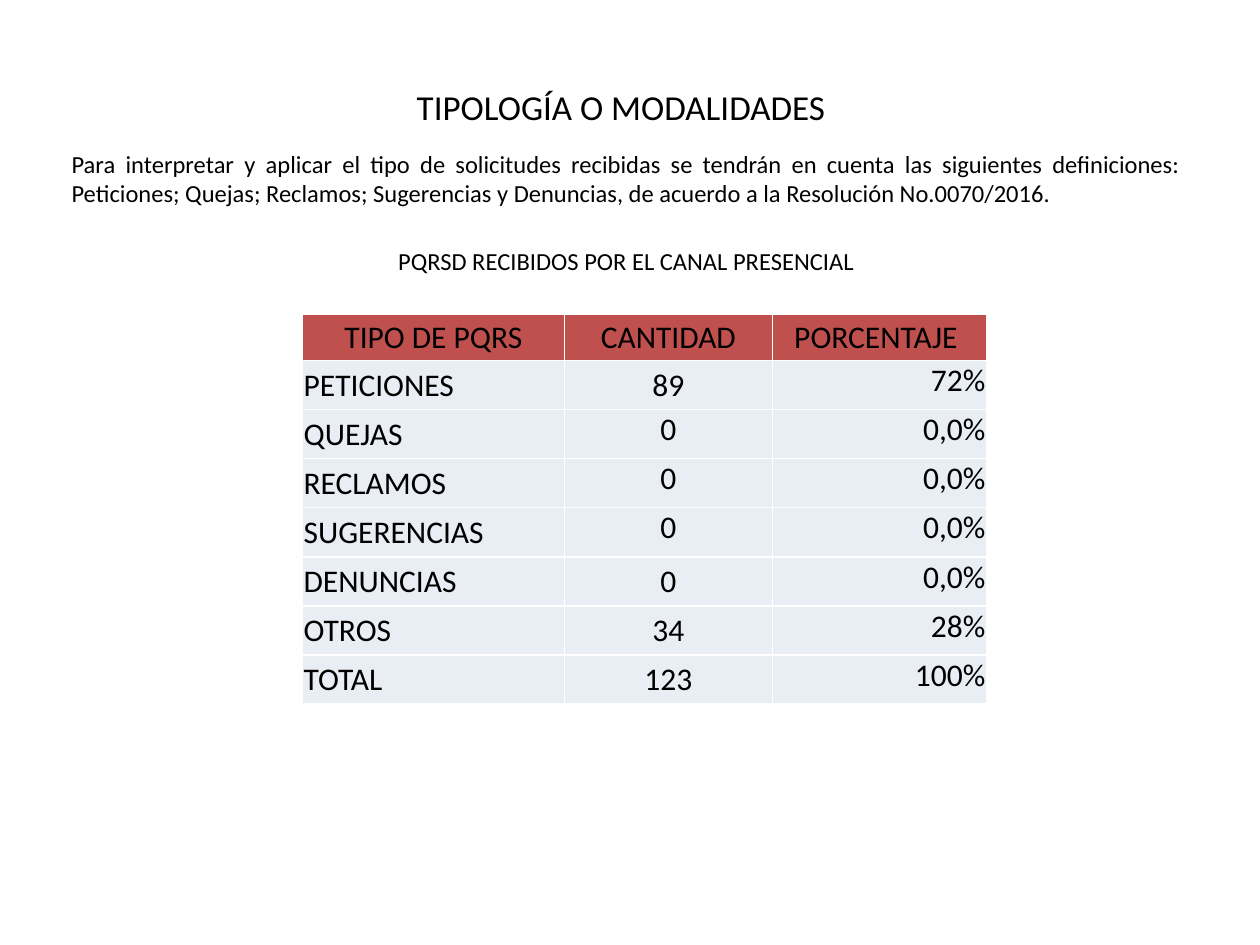
from lxml import etree
from pptx import Presentation
from pptx.dml.color import RGBColor
from pptx.enum.text import MSO_ANCHOR, PP_ALIGN
from pptx.oxml.ns import qn
from pptx.util import Inches, Pt

LEFT, CENTER, RIGHT, JUSTIFY = PP_ALIGN.LEFT, PP_ALIGN.CENTER, PP_ALIGN.RIGHT, PP_ALIGN.JUSTIFY
TOP, MIDDLE = MSO_ANCHOR.TOP, MSO_ANCHOR.MIDDLE
COLORS = {"text": "000000", "header": "C0504D", "row": "E9EDF4", "border": "FFFFFF"}
FONT = "Calibri"

HEADERS = ["TIPO DE PQRS", "CANTIDAD", "PORCENTAJE "]
ROWS = [
    ["PETICIONES", "89", "72%"],
    ["QUEJAS", "0", "0,0%"],
    ["RECLAMOS", "0", "0,0%"],
    ["SUGERENCIAS", "0", "0,0%"],
    ["DENUNCIAS", "0", "0,0%"],
    ["OTROS", "34", "28%"],
    ["TOTAL", "123", "100%"],
]
TOP_COUNTS = {"QUEJAS", "RECLAMOS", "SUGERENCIAS"}
COLUMN_WIDTHS = [2.08, 1.65, 1.7]
HEADER_HEIGHT, ROW_HEIGHT = 0.37, 0.39


class SlideBuilder:
    def __init__(self, slide):
        self.slide = slide

    def style(self, paragraph, size, alignment):
        paragraph.alignment = alignment
        for span in paragraph.runs:
            span.font.name = FONT
            span.font.size = Pt(size)
            span.font.color.rgb = RGBColor.from_string(COLORS["text"])

    def text(self, left, top, width, height, items, size, anchor, gap=0):
        box = self.slide.shapes.add_textbox(
            Inches(left), Inches(top), Inches(width), Inches(height))
        frame = box.text_frame
        frame.word_wrap = True
        frame.vertical_anchor = anchor
        for index, (words, alignment) in enumerate(items):
            para = frame.add_paragraph() if index else frame.paragraphs[0]
            para.text = words
            if index:
                para.space_before = Pt(gap)
            self.style(para, size, alignment)

    def cell(self, cell, words, fill, alignment, anchor):
        cell.text_frame.text = words
        self.style(cell.text_frame.paragraphs[0], 18, alignment)
        cell.vertical_anchor = anchor
        cell.margin_left = cell.margin_right = cell.margin_top = Inches(0.01)
        cell.margin_bottom = 0
        cell.fill.solid()
        cell.fill.fore_color.rgb = RGBColor.from_string(COLORS[fill])
        properties = cell._tc.get_or_add_tcPr()
        for position, side in enumerate(("a:lnL", "a:lnR", "a:lnT", "a:lnB")):
            line = etree.Element(qn(side), w=str(Pt(1)))
            solid = etree.SubElement(line, qn("a:solidFill"))
            etree.SubElement(solid, qn("a:srgbClr"), val=COLORS["border"])
            properties.insert(position, line)

    def table(self, left, top):
        height = HEADER_HEIGHT + ROW_HEIGHT * len(ROWS)
        table = self.slide.shapes.add_table(
            len(ROWS) + 1, len(HEADERS), Inches(left), Inches(top),
            Inches(sum(COLUMN_WIDTHS)), Inches(height)).table
        table.first_row = table.horz_banding = False
        for column, width in zip(table.columns, COLUMN_WIDTHS):
            column.width = Inches(width)
        for index, row in enumerate(table.rows):
            row.height = Inches(ROW_HEIGHT if index else HEADER_HEIGHT)
        for column, words in enumerate(HEADERS):
            self.cell(table.cell(0, column), words, "header", CENTER, MIDDLE)
        for index, values in enumerate(ROWS, start=1):
            count_anchor = TOP if values[0] in TOP_COUNTS else MIDDLE
            layout = zip(values, (LEFT, CENTER, RIGHT), (MIDDLE, count_anchor, TOP))
            for column, (words, alignment, anchor) in enumerate(layout):
                self.cell(table.cell(index, column), words, "row", alignment, anchor)


def main():
    deck = Presentation()
    deck.slide_width, deck.slide_height = Inches(10), Inches(7.5)
    page = SlideBuilder(deck.slides.add_slide(deck.slide_layouts[6]))
    page.text(0.43, 0.48, 9, 0.73, [("TIPOLOGÍA O MODALIDADES", CENTER)], 20, MIDDLE)
    page.text(0.47, 1.13, 9, 4.9, [
        ("Para interpretar y aplicar el tipo de solicitudes recibidas se tendrán en cuenta "
         "las siguientes definiciones: Peticiones; Quejas; Reclamos; Sugerencias y Denuncias, "
         "de acuerdo a la Resolución No.0070/2016.", JUSTIFY),
        ("PQRSD RECIBIDOS POR EL CANAL PRESENCIAL", CENTER),
    ], 14, TOP, gap=22)
    page.table(2.4, 2.49)
    deck.save("out.pptx")


if __name__ == "__main__":
    main()
